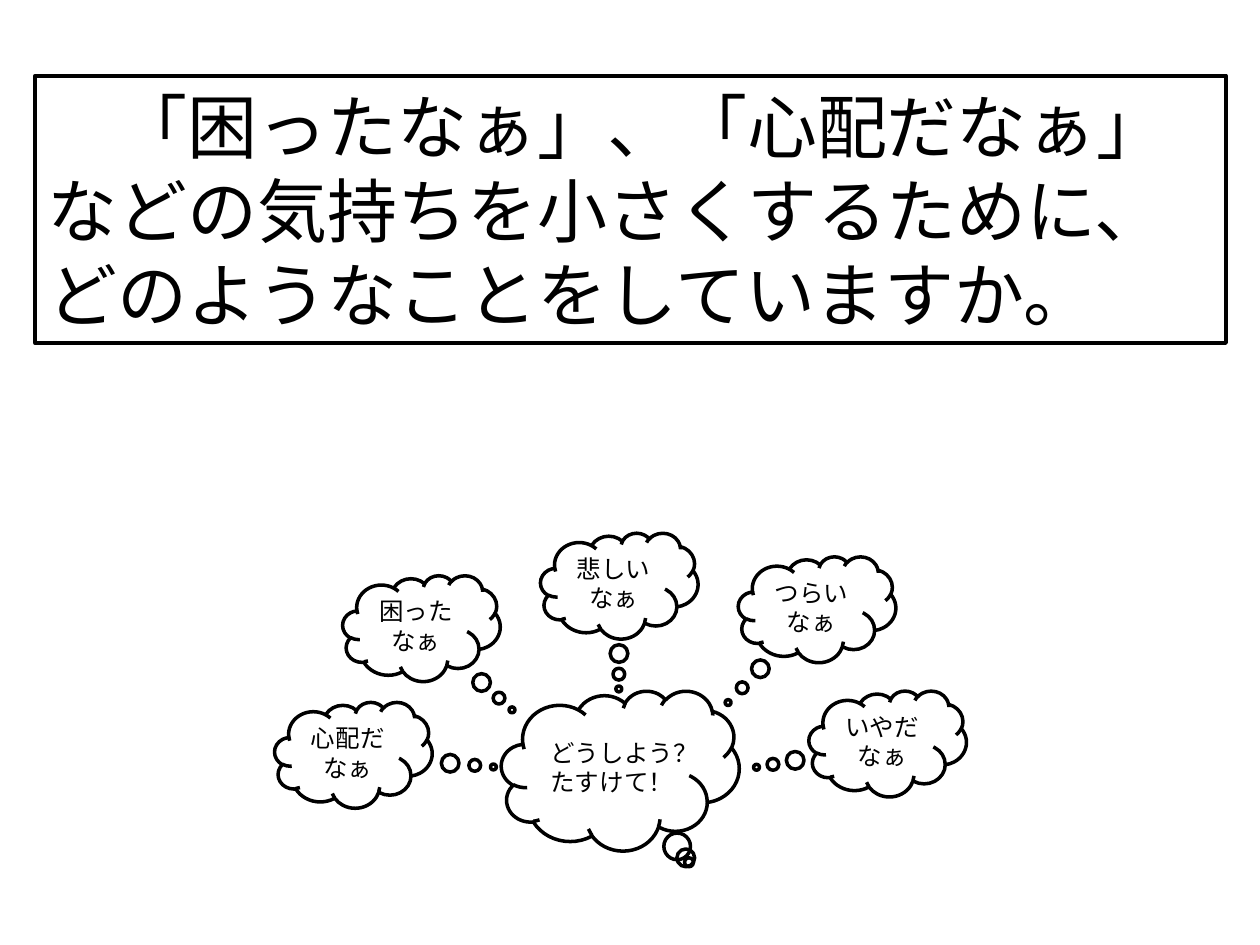
import dataclasses

import pptx
import pptx.dml.color
import pptx.enum.shapes
import pptx.enum.text
import pptx.oxml
import pptx.oxml.ns
import pptx.util


@dataclasses.dataclass(frozen=True)
class Theme:
    font: str = "Noto Sans CJK JP"
    ink: pptx.dml.color.RGBColor = pptx.dml.color.RGBColor(0, 0, 0)
    head: float = 40
    body: float = 14
    frame: float = 2.25
    edge: float = 2


@dataclasses.dataclass(frozen=True)
class Cloud:
    words: str
    left: float  # share of slide width
    top: float  # share of slide height
    tail: tuple  # tail tip from the centre, in shares of the cloud's size
    scale: float = 1


THEME = Theme()
WIDE, HIGH = pptx.util.Inches(10), pptx.util.Inches(7.5)
BASE = (0.125, 0.112)  # size of a small cloud, in shares of the slide

HEAD = "\u3000「困ったなぁ」、「心配だなぁ」などの気持ちを小さくするために、どのようなことをしていますか。".replace("\u3000", "　")
CLOUDS = [
    Cloud("困ったなぁ", 0.272, 0.609, (0.575, 0.77)),
    Cloud("心配だなぁ", 0.218, 0.743, (0.889, 0.113)),
    Cloud("悲しいなぁ", 0.429, 0.564, (-0.003, 0.974)),
    Cloud("つらいなぁ", 0.586, 0.589, (-0.565, 0.88)),
    Cloud("いやだなぁ", 0.642, 0.731, (-0.833, 0.223)),
    Cloud("どうしよう？\nたすけて！", 0.398, 0.731, (0.289, 0.573), 1.51),
]


def box(left: float, top: float, wide: float, high: float) -> tuple:
    """Turn shares of the slide into lengths."""
    return int(left * WIDE), int(top * HIGH), int(wide * WIDE), int(high * HIGH)


def outline(shape, width: float) -> None:
    shape.line.color.rgb = THEME.ink
    shape.line.width = pptx.util.Pt(width)


def write(shape, words: str, size: float, align) -> None:
    frame = shape.text_frame
    frame.text = words
    frame.word_wrap = True
    frame.vertical_anchor = pptx.enum.text.MSO_ANCHOR.MIDDLE
    for para in frame.paragraphs:
        para.alignment = align
        for run in para.runs:
            run.font.size = pptx.util.Pt(size)
            run.font.name = THEME.font
            run.font.color.rgb = THEME.ink
            # Japanese glyphs take the East Asian font
            east = pptx.oxml.parse_xml(
                f'<a:ea {pptx.oxml.ns.nsdecls("a")} typeface="{THEME.font}"/>')
            run.font._element.find(pptx.oxml.ns.qn("a:latin")).addnext(east)


def draw_head(slide) -> None:
    title = slide.shapes.title
    title.left, title.top, title.width, title.height = box(0.028, 0.08, 0.945, 0.283)
    outline(title, THEME.frame)
    write(title, HEAD, THEME.head, pptx.enum.text.PP_ALIGN.LEFT)
    title.text_frame.auto_size = pptx.enum.text.MSO_AUTO_SIZE.NONE


def draw_cloud(slide, cloud: Cloud) -> None:
    wide, high = (side * cloud.scale for side in BASE)
    shape = slide.shapes.add_shape(
        pptx.enum.shapes.MSO_SHAPE.CLOUD_CALLOUT,
        *box(cloud.left, cloud.top, wide, high))
    shape.shadow.inherit = False
    shape.fill.background()
    outline(shape, THEME.edge)
    for index, share in enumerate(cloud.tail):
        shape.adjustments[index] = share
    write(shape, cloud.words, THEME.body, pptx.enum.text.PP_ALIGN.CENTER)


def main() -> None:
    deck = pptx.Presentation()
    deck.slide_width, deck.slide_height = WIDE, HIGH
    slide = deck.slides.add_slide(deck.slide_layouts.get_by_name("Title Only"))

    # Thought clouds around the cry for help
    for cloud in CLOUDS:
        draw_cloud(slide, cloud)

    # Framed question
    draw_head(slide)
    deck.save("out.pptx")


if __name__ == "__main__":
    main()
